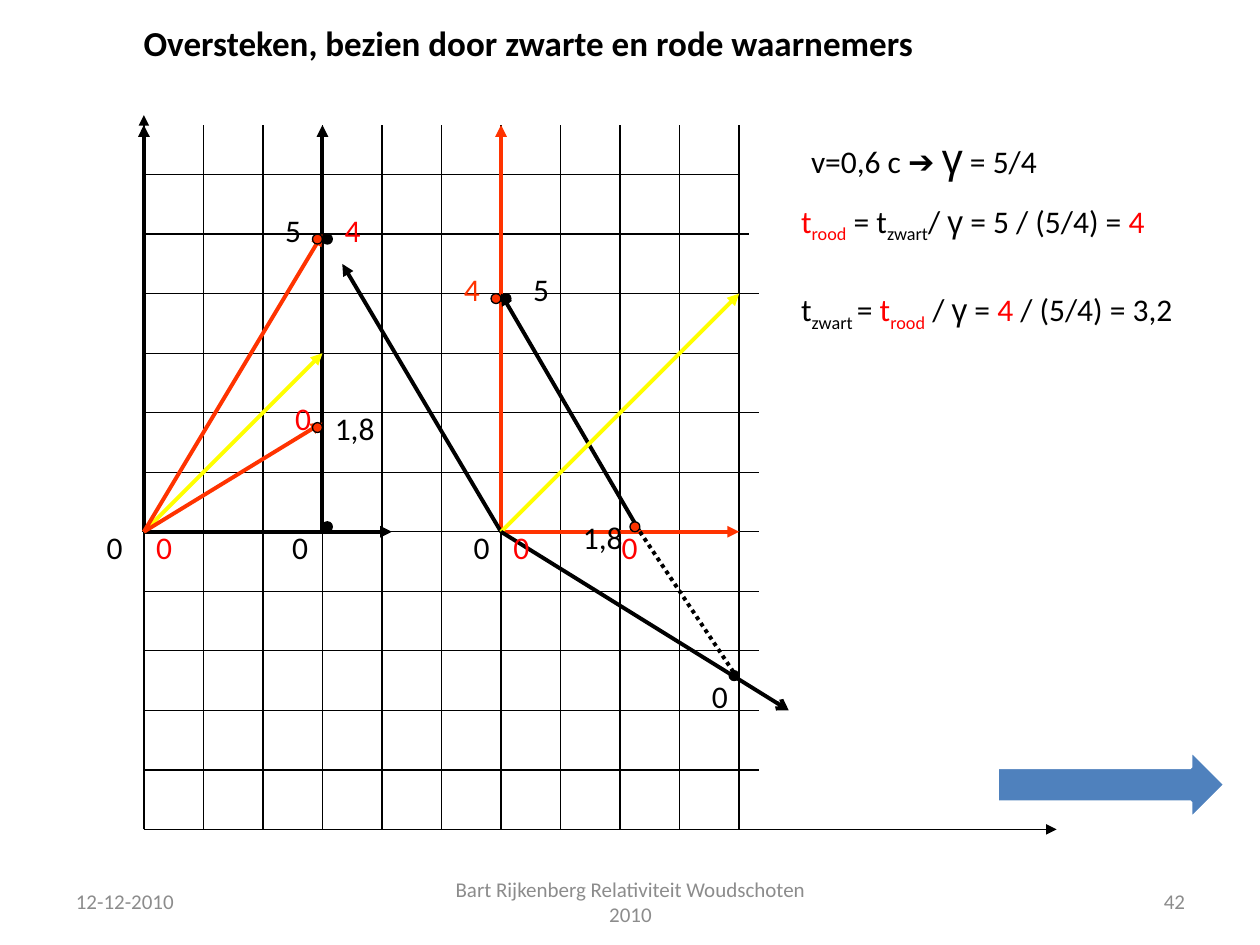
import dataclasses

import lxml.etree
import pptx
import pptx.dml.color
import pptx.enum.dml
import pptx.enum.shapes
import pptx.enum.text
import pptx.oxml.ns
import pptx.util

PX = 7200  # EMU per px (0.2 mm)
STEP = 60  # one grid unit in px

SHAPES = pptx.enum.shapes.MSO_SHAPE
ALIGN = pptx.enum.text.PP_ALIGN
ANCHOR = pptx.enum.text.MSO_ANCHOR
AUTO_SIZE = pptx.enum.text.MSO_AUTO_SIZE
DOTTED = pptx.enum.dml.MSO_LINE.ROUND_DOT


@dataclasses.dataclass(frozen=True)
class Theme:
    black: str = "000000"
    axis_red: str = "FF3300"
    text_red: str = "FF0000"
    light: str = "FFFF00"
    grey: str = "8C8C8C"
    blue: str = "4F81BD"
    white: str = "FFFFFF"
    font: str = "Calibri"
    greek_font: str = "Arial"
    title_size: int = 20
    text_size: int = 18
    gamma_size: int = 24
    footer_size: int = 12
    thin: float = 0.75
    thick: float = 2.25
    outline: float = 2


THEME = Theme()


def px(value):
    return pptx.util.Emu(round(value * PX))


def rgb(color):
    return pptx.dml.color.RGBColor.from_string(color)


def set_attributes(target, values):
    for name, value in values.items():
        setattr(target, name, value)


def add_xml(parent, tag, **attributes):
    return lxml.etree.SubElement(parent, pptx.oxml.ns.qn(tag), **attributes)


def add_line(slide, start, end, color, width, arrow=None, dash=None):
    kind = pptx.enum.shapes.MSO_CONNECTOR.STRAIGHT
    connector = slide.shapes.add_connector(kind, *map(px, (*start, *end)))
    connector.line.color.rgb = rgb(color)
    connector.line.width = pptx.util.Pt(width)
    if dash:
        connector.line.dash_style = dash
    properties = connector.element.spPr
    if arrow:
        add_xml(properties.find(pptx.oxml.ns.qn("a:ln")), "a:tailEnd", type=arrow)
    add_xml(properties, "a:effectLst")


def add_filled_shape(slide, kind, box, fill, line, width):
    shape = slide.shapes.add_shape(kind, *map(px, box))
    shape.shadow.inherit = False
    shape.fill.solid()
    shape.fill.fore_color.rgb = rgb(fill)
    shape.line.color.rgb = rgb(line)
    shape.line.width = pptx.util.Pt(width)


def fill_text(shape, runs, frame_values, align=ALIGN.LEFT, tab=None):
    """Each run is (text, format); a format may hold color, size, name, bold, base."""
    set_attributes(shape.text_frame, frame_values)
    paragraph = shape.text_frame.paragraphs[0]
    paragraph.alignment = align
    if tab:
        tabs = add_xml(paragraph._p.get_or_add_pPr(), "a:tabLst")
        add_xml(tabs, "a:tab", pos=str(px(tab)), algn="l")
    for text, values in runs:
        values = {"name": THEME.font, "size": THEME.text_size,
                  "color": THEME.black, **values}
        run = paragraph.add_run()
        run.text = text
        run.font.color.rgb = rgb(values.pop("color"))
        base = values.pop("base", None)
        values["size"] = pptx.util.Pt(values["size"])
        set_attributes(run.font, values)
        if base:
            run._r.get_or_add_rPr().set("baseline", str(base))


def add_text(slide, box, runs, wrap=False, tab=None):
    shape = slide.shapes.add_textbox(*map(px, box))
    frame = {"word_wrap": wrap, "auto_size": AUTO_SIZE.SHAPE_TO_FIT_TEXT}
    fill_text(shape, runs, frame, tab=tab)


def build_title(slide, box):
    title = slide.shapes.title
    set_attributes(title, dict(zip(("left", "top", "width", "height"), map(px, box))))
    frame = {"word_wrap": True, "auto_size": AUTO_SIZE.NONE,
             "vertical_anchor": ANCHOR.TOP}
    runs = [("Oversteken, bezien door zwarte en rode waarnemers",
             {"size": THEME.title_size, "bold": True})]
    fill_text(title, runs, frame)


def build_diagram(slide, box):
    """Grid, world lines, events and labels; points are measured from bottom left."""
    left, top, width, height = box

    def place(x, y):
        return left + x, top + height - y

    # Outer axes and grid
    grid = [((0, 0), (0, height + 10), "triangle"), ((0, 0), (920, 0), "triangle")]
    grid += [((x, 0), (x, height), None) for x in range(STEP, width + 1, STEP)]
    row_ends = {480: 600, 600: 610, 660: 600}
    grid += [((0, y), (row_ends.get(y, 620), y), None)
             for y in range(STEP, height, STEP)]
    for start, end, arrow in grid:
        add_line(slide, place(*start), place(*end), THEME.black, THEME.thin, arrow)

    # World lines of both observers and light
    black_origin, red_origin, meeting = (0, 300), (360, 300), (500, 300)
    world_lines = [
        (black_origin, (0, 710), THEME.black),
        ((180, 300), (180, 710), THEME.black),
        (black_origin, (250, 300), THEME.black),
        (black_origin, (180, 480), THEME.light),
        (black_origin, (180, 600), THEME.axis_red),
        (black_origin, (180, 410), THEME.axis_red),
        (red_origin, (360, 710), THEME.axis_red),
        (red_origin, (200, 570), THEME.black),
        (meeting, (360, 540), THEME.black),
        (red_origin, (600, 300), THEME.axis_red),
        (red_origin, (600, 540), THEME.light),
    ]
    for start, end, color in world_lines:
        add_line(slide, place(*start), place(*end), color, THEME.thick, "triangle")
    add_line(slide, place(*red_origin), place(650, 120), THEME.black,
             THEME.thick, "arrow")
    add_line(slide, place(*meeting), place(600, 150), THEME.black,
             THEME.thick, dash=DOTTED)

    # Events
    events = {
        THEME.axis_red: [(170, 600), (490, 310), (170, 410), (350, 540)],
        THEME.black: [(180, 310), (590, 160), (180, 600), (360, 540)],
    }
    for color, points in events.items():
        for point in points:
            add_filled_shape(slide, SHAPES.OVAL, (*place(*point), 10, 10),
                             color, THEME.black, THEME.thin)

    # Event times
    labels = [
        ("4", 310, 570, THEME.axis_red), ("5", 130, 630, THEME.black),
        ("0", 0, 310, THEME.text_red), ("4", 190, 630, THEME.text_red),
        ("0", 560, 160, THEME.black), ("0", 320, 310, THEME.black),
        ("1,8", 430, 320, THEME.black), ("5", 380, 570, THEME.black),
        ("1,8", 180, 430, THEME.black), ("0", 140, 440, THEME.text_red),
    ]
    for text, x, y, color in labels:
        label_width = 43 if len(text) == 1 else 70
        add_text(slide, (*place(x, y), label_width, 51), [(text, {"color": color})])
    for x, label_width, tab, color in [(-50, 280, 187, THEME.black),
                                       (360, 180, 109, THEME.text_red)]:
        add_text(slide, (*place(x, 310), label_width, 51),
                 [("0\t0", {"color": color})], wrap=True, tab=tab)


def build_formulas(slide, box):
    left, top, width, height = box
    red = {"color": THEME.text_red}
    low = {"base": -25000}
    gamma = ("γ", {"name": THEME.greek_font})
    red_time = [("t", red), ("rood", {**red, **low})]
    formulas = [
        (10, 0, 281, [("v=0,6 c ➔ ", {}),
                      ("γ", {"name": THEME.greek_font, "size": THEME.gamma_size}),
                      (" = 5/4", {})]),
        (0, 71, 385, [*red_time, (" = t", {}), ("zwart", low), ("/ ", {}), gamma,
                      (" = 5 / (5/4) = ", {}), ("4", red)]),
        (0, 160, width, [("t", {}), ("zwart ", low), ("= ", {}), *red_time,
                         (" / ", {}), gamma, (" = ", {}), ("4", red),
                         (" / (5/4) = 3,2", {})]),
    ]
    for x, y, formula_width, runs in formulas:
        add_text(slide, (left + x, top + y, formula_width, 51), runs)


def build_footer(slide, box):
    left, top, width, height = box
    parts = [
        (0, 296, ALIGN.LEFT, "12-12-2010"),
        (370, 403, ALIGN.CENTER, "Bart Rijkenberg Relativiteit Woudschoten 2010"),
        (width - 296, 296, ALIGN.RIGHT, "42"),
    ]
    for x, part_width, align, text in parts:
        shape = slide.shapes.add_textbox(*map(px, (left + x, top, part_width, height)))
        runs = [(text, {"size": THEME.footer_size, "color": THEME.grey})]
        fill_text(shape, runs, {"word_wrap": True, "vertical_anchor": ANCHOR.MIDDLE},
                  align)


def main():
    presentation = pptx.Presentation()
    presentation.slide_width = pptx.util.Inches(10)
    presentation.slide_height = pptx.util.Inches(7.5)
    slide = presentation.slides.add_slide(presentation.slide_layouts[5])
    build_title(slide, (132, 15, 916, 56))
    build_diagram(slide, (145, 126, 600, 710))
    build_formulas(slide, (795, 126, 417, 211))
    build_footer(slide, (64, 883, 1143, 51))
    # Next-step arrow
    add_filled_shape(slide, SHAPES.RIGHT_ARROW, (1005, 756, 230, 70),
                     THEME.blue, THEME.white, THEME.outline)
    presentation.save("out.pptx")


if __name__ == "__main__":
    main()
